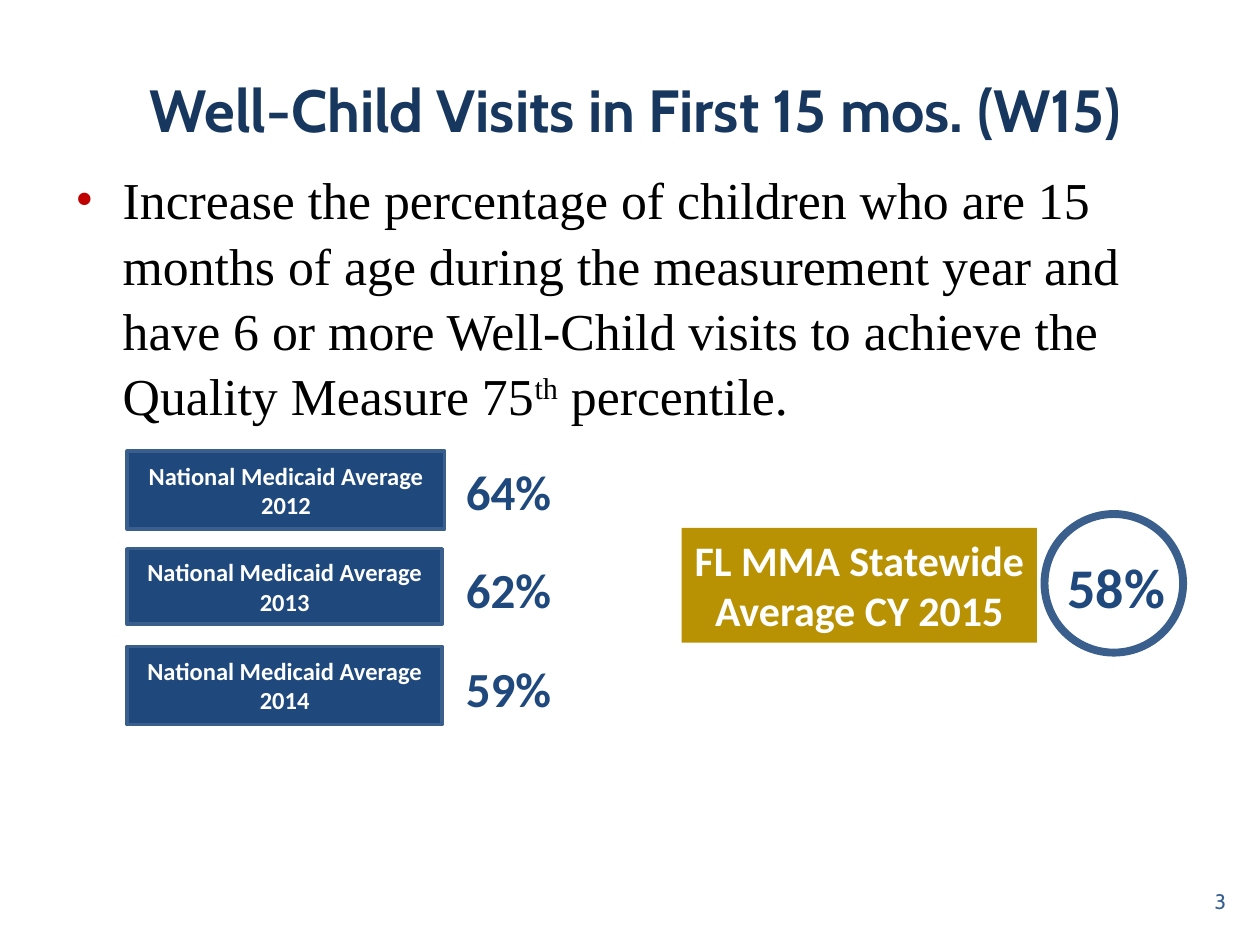
import pptx
import pptx.util
import pptx.dml.color
import pptx.enum.shapes
import pptx.enum.text
import pptx.oxml
import pptx.oxml.ns

Pt = pptx.util.Pt
RGB = pptx.dml.color.RGBColor.from_string
SHAPE = pptx.enum.shapes.MSO_SHAPE
ALIGN = pptx.enum.text.PP_ALIGN
ANCHOR = pptx.enum.text.MSO_ANCHOR
COLORS = {
    "title": "17375E", "text": "000000", "bullet": "C00000", "number": "376092",
    "navy": "1F497D", "border": "3A5F8C", "gold": "B99203", "white": "FFFFFF",
}

prs = pptx.Presentation()
prs.slide_width = pptx.util.Inches(10)
prs.slide_height = pptx.util.Inches(7.5)
col = prs.slide_width / 100
row = prs.slide_height / 75
s = prs.slides.add_slide(prs.slide_layouts[5])


def grid(left, top, width, height):
    return [round(left * col), round(top * row), round(width * col), round(height * row)]


def write(sp, text, size, color, font="Calibri", bold=True, align=ALIGN.CENTER, anchor=ANCHOR.TOP):
    tf = sp.text_frame
    tf.text = text
    tf.word_wrap = True
    tf.auto_size = pptx.enum.text.MSO_AUTO_SIZE.NONE
    tf.vertical_anchor = anchor
    for p in tf.paragraphs:
        p.alignment = align
        for r in p.runs:
            r.font.size = Pt(size)
            r.font.name = font
            r.font.bold = bold
            r.font.color.rgb = RGB(COLORS[color])


title = s.shapes.title
title.left, title.top, title.width, title.height = grid(5, 2.4, 90.9, 12.5)
write(title, "Well-Child Visits in First 15 mos. (W15)", 34, "title", "Cabin", anchor=ANCHOR.MIDDLE)

body = s.shapes.add_textbox(*grid(5, 12.6, 90, 19.2))
goal = (
    "Increase the percentage of children who are 15 months of age during the "
    "measurement year and have 6 or more Well-Child visits to achieve the "
    "Quality Measure 75"
)
write(body, goal, 29.6, "text", "Times New Roman", False, ALIGN.LEFT)
p = body.text_frame.paragraphs[0]
for text, baseline in [("th", 30000), (" percentile.", 0)]:
    r = p.add_run()
    r.text = text
    r.font.size = Pt(29.6)
    r.font.name = "Times New Roman"
    r.font.color.rgb = RGB(COLORS["text"])
    r.font._element.set("baseline", str(baseline))
p.line_spacing = 1.05
pPr = p._p.get_or_add_pPr()
pPr.set("marL", str(round(3.75 * col)))
pPr.set("indent", str(round(-3.75 * col)))
ns = pptx.oxml.ns.nsdecls("a")
for xml in [
    f'<a:buClr {ns}><a:srgbClr val="{COLORS["bullet"]}"/></a:buClr>',
    f'<a:buFont {ns} typeface="Times New Roman"/>',
    f'<a:buChar {ns} char="•"/>',
]:
    pPr.append(pptx.oxml.parse_xml(xml))

number = s.shapes.add_textbox(*grid(75, 69.5, 23.3, 4))
write(number, "3", 12, "number", "Cabin", False, ALIGN.RIGHT, ANCHOR.MIDDLE)

averages = [("2012", "64%", 25.2, 6.2), ("2013", "62%", 25, 6), ("2014", "59%", 25, 6.2)]
for i, (year, rate, width, height) in enumerate(averages):
    sp = s.shapes.add_shape(SHAPE.RECTANGLE, *grid(10.1, 35.8 + 7.75 * i, width, height))
    sp.shadow.inherit = False
    sp.fill.solid()
    sp.fill.fore_color.rgb = RGB(COLORS["navy"])
    sp.line.color.rgb = RGB(COLORS["border"])
    sp.line.width = Pt(2)
    write(sp, f"National Medicaid Average\n{year}", 14, "white", anchor=ANCHOR.MIDDLE)
    tb = s.shapes.add_textbox(*grid(34.2, 36.1 + 7.85 * i, 12.3, 5.7))
    write(tb, rate, 28, "navy")

state = s.shapes.add_shape(SHAPE.RECTANGLE, *grid(54.1, 41.9, 28.2, 9.1))
state.shadow.inherit = False
state.fill.solid()
state.fill.fore_color.rgb = RGB(COLORS["gold"])
state.line.fill.background()
write(state, "FL MMA Statewide Average CY 2015", 24, "white")
state.text_frame.margin_left = state.text_frame.margin_right = round(0.5 * col)

rate = s.shapes.add_textbox(*grid(83.05, 43.35, 11.1, 6.4))
write(rate, "58%", 32, "navy")

ring = s.shapes.add_shape(SHAPE.OVAL, *grid(82.9, 40.8, 11, 11))
ring.shadow.inherit = False
ring.fill.background()
ring.line.color.rgb = RGB(COLORS["border"])
ring.line.width = Pt(4.5)

prs.save("out.pptx")
